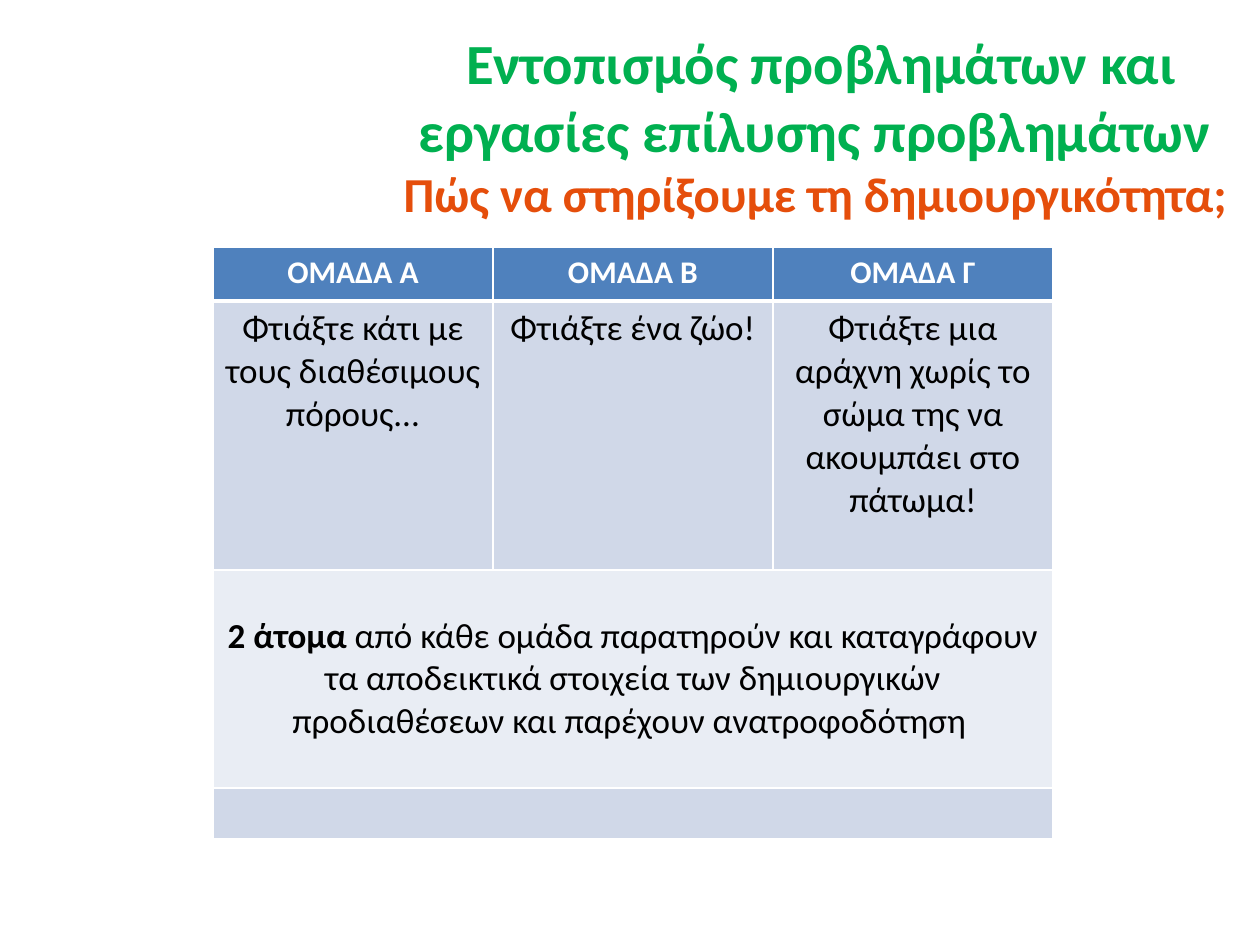
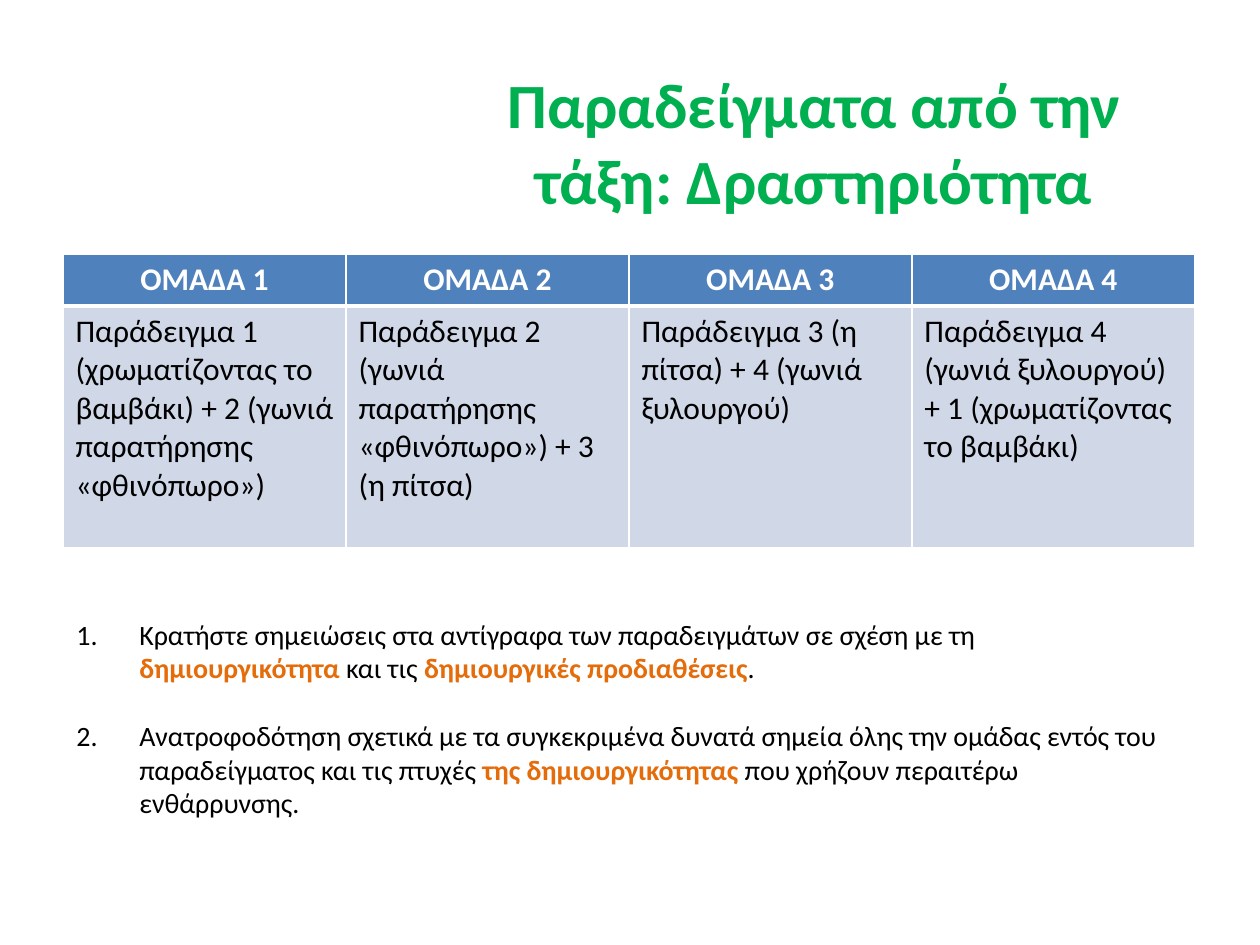
from lxml import etree
from pptx import Presentation
from pptx.dml.color import RGBColor
from pptx.enum.text import MSO_ANCHOR as ANCHOR, MSO_AUTO_SIZE as AUTO, PP_ALIGN as ALIGN
from pptx.oxml.ns import qn
from pptx.util import Pt

PX = 914400 / 126
WIDTH, HEIGHT = 1260, 945
FONT = "Calibri"
GREEN, RED, ORANGE = "00B050", "E54E0B", "E46C0A"
BLACK, WHITE = "000000", "FFFFFF"
HEADER, BAND_DARK, BAND_LIGHT = "4F81BD", "D0D8E8", "E9EDF4"

HEAD = dict(size=18, bold=True, color=WHITE)
TITLE = dict(size=32.4, bold=True, color=GREEN)
SUBTITLE = dict(size=27.9, bold=True, color=RED)
BIG_TITLE = dict(TITLE, size=36)
NOTE = dict(size=16)
KEY = dict(size=16, bold=True, color=ORANGE)


def px(*values):
    return [round(v * PX) for v in values]


def rgb(hex_color):
    return RGBColor.from_string(hex_color)


def add_runs(p, runs, align=ALIGN.LEFT):
    """Fill a paragraph with (text, format) pairs; a newline in the text is a line break."""
    p.alignment = align
    for text, fmt in runs:
        first, *rest = text.split("\n")
        for i, part in enumerate([first, *rest]):
            if i:
                p.add_line_break()
            if not part:
                continue
            r = p.add_run()
            r.text = part
            values = dict(name=FONT, bold=False, color=BLACK) | fmt
            r.font.color.rgb = rgb(values.pop("color"))
            r.font.size = Pt(values.pop("size"))
            for name, value in values.items():
                setattr(r.font, name, value)


def add_titled_slide(prs, box, runs):
    s = prs.slides.add_slide(prs.slide_layouts[5])
    title = s.shapes.title
    title.left, title.top, title.width, title.height = px(*box)
    tf = title.text_frame
    for name, value in dict(word_wrap=True, auto_size=AUTO.NONE,
                            vertical_anchor=ANCHOR.MIDDLE).items():
        setattr(tf, name, value)
    add_runs(tf.paragraphs[0], runs, ALIGN.CENTER)
    return s


def set_borders(cell, top, bottom):
    tc_pr = cell._tc.get_or_add_tcPr()
    for i, (side, width) in enumerate(dict(L=1, R=1, T=top, B=bottom).items()):
        ln = etree.Element(qn(f"a:ln{side}"), w=str(Pt(width)))
        fill = etree.SubElement(ln, qn("a:solidFill"))
        etree.SubElement(fill, qn("a:srgbClr"), val=WHITE)
        tc_pr.insert(i, ln)


def add_group_table(s, left, top, col_width, row_heights, headings):
    """Add a table with a heading row and banded rows below it."""
    cols = len(headings)
    frame = s.shapes.add_table(len(row_heights), cols,
                               *px(left, top, cols * col_width, sum(row_heights)))
    table = frame.table
    table.horz_banding = False
    for col in table.columns:
        col.width, = px(col_width)
    for i, (row, height) in enumerate(zip(table.rows, row_heights)):
        row.height, = px(height)
        color = HEADER if i == 0 else BAND_DARK if i % 2 else BAND_LIGHT
        for cell in row.cells:
            set_borders(cell, 3 if i == 1 else 1, 3 if i == 0 else 1)
            cell.fill.solid()
            cell.fill.fore_color.rgb = rgb(color)
    fill_row(table, 0, headings, HEAD, ALIGN.CENTER)
    return table


def fill_row(table, row, texts, fmt, align):
    for col, text in enumerate(texts):
        add_runs(table.cell(row, col).text_frame.paragraphs[0], [(text, fmt)], align)


def add_numbered_list(s, box, items, gap):
    tf = s.shapes.add_textbox(*px(*box)).text_frame
    tf.word_wrap = True
    for i, runs in enumerate(items):
        p = tf.add_paragraph() if i else tf.paragraphs[0]
        p_pr = p._p.get_or_add_pPr()
        indent, = px(63)
        p_pr.set("marL", str(indent))
        p_pr.set("indent", str(-indent))
        etree.SubElement(p_pr, qn("a:buFont"), typeface="+mj-lt")
        etree.SubElement(p_pr, qn("a:buAutoNum"), type="arabicPeriod")
        if i:
            p.space_before = Pt(gap)
        add_runs(p, runs)


def build_creativity_slide(prs):
    s = add_titled_slide(prs, (382, 37, 878, 176), [
        ("Εντοπισμός προβλημάτων και εργασίες επίλυσης προβλημάτων \n", TITLE),
        ("Πώς να στηρίξουμε τη δημιουργικότητα; ", SUBTITLE)])
    table = add_group_table(s, 213, 247, 280, (54, 269, 218, 51),
                            ["ΟΜΑΔΑ Α", "ΟΜΑΔΑ Β", "ΟΜΑΔΑ Γ"])
    task = dict(size=20)
    fill_row(table, 1, ["Φτιάξτε κάτι με τους διαθέσιμους πόρους...",
                        "Φτιάξτε ένα ζώο!",
                        "Φτιάξτε μια αράχνη χωρίς το σώμα της να ακουμπάει στο πάτωμα!"],
             task, ALIGN.CENTER)
    for row in (2, 3):
        table.cell(row, 0).merge(table.cell(row, 2))
    observers = table.cell(2, 0)
    observers.vertical_anchor = ANCHOR.MIDDLE
    add_runs(observers.text_frame.paragraphs[0], [
        ("2 άτομα ", dict(task, bold=True)),
        ("από κάθε ομάδα παρατηρούν και καταγράφουν τα αποδεικτικά στοιχεία των "
         "δημιουργικών προδιαθέσεων και παρέχουν ανατροφοδότηση", task),
        (" ", dict(size=18, name="Cambria"))], ALIGN.CENTER)


def build_examples_slide(prs):
    s = add_titled_slide(prs, (461, 78, 706, 127),
                         [("Παραδείγματα από την τάξη: Δραστηριότητα", BIG_TITLE)])
    table = add_group_table(s, 63, 254, 283, (52, 242),
                            [f"ΟΜΑΔΑ {n}" for n in range(1, 5)])
    fill_row(table, 1, [
        "Παράδειγμα 1 (χρωματίζοντας το βαμβάκι) + 2 (γωνιά παρατήρησης «φθινόπωρο»)",
        "Παράδειγμα 2 (γωνιά παρατήρησης «φθινόπωρο») + 3 (η πίτσα)",
        "Παράδειγμα 3 (η πίτσα) + 4 (γωνιά ξυλουργού)",
        "Παράδειγμα 4 (γωνιά ξυλουργού) + 1 (χρωματίζοντας το βαμβάκι)"],
        dict(size=18), ALIGN.LEFT)
    add_numbered_list(s, (64, 611, 1121, 255), [
        [("Κρατήστε σημειώσεις στα αντίγραφα των παραδειγμάτων σε σχέση με τη ", NOTE),
         ("δημιουργικότητα", KEY), (" και τις ", NOTE),
         ("δημιουργικές προδιαθέσεις", KEY), (".", NOTE)],
        [("Ανατροφοδότηση σχετικά με τα συγκεκριμένα δυνατά σημεία όλης την ομάδας "
          "εντός του παραδείγματος και τις πτυχές ", NOTE),
         ("της δημιουργικότητας ", KEY),
         ("που χρήζουν περαιτέρω ενθάρρυνσης.", NOTE)]], gap=19.5)


def main():
    prs = Presentation()
    prs.slide_width, prs.slide_height = px(WIDTH, HEIGHT)
    build_creativity_slide(prs)
    build_examples_slide(prs)
    prs.save("out.pptx")


if __name__ == "__main__":
    main()
